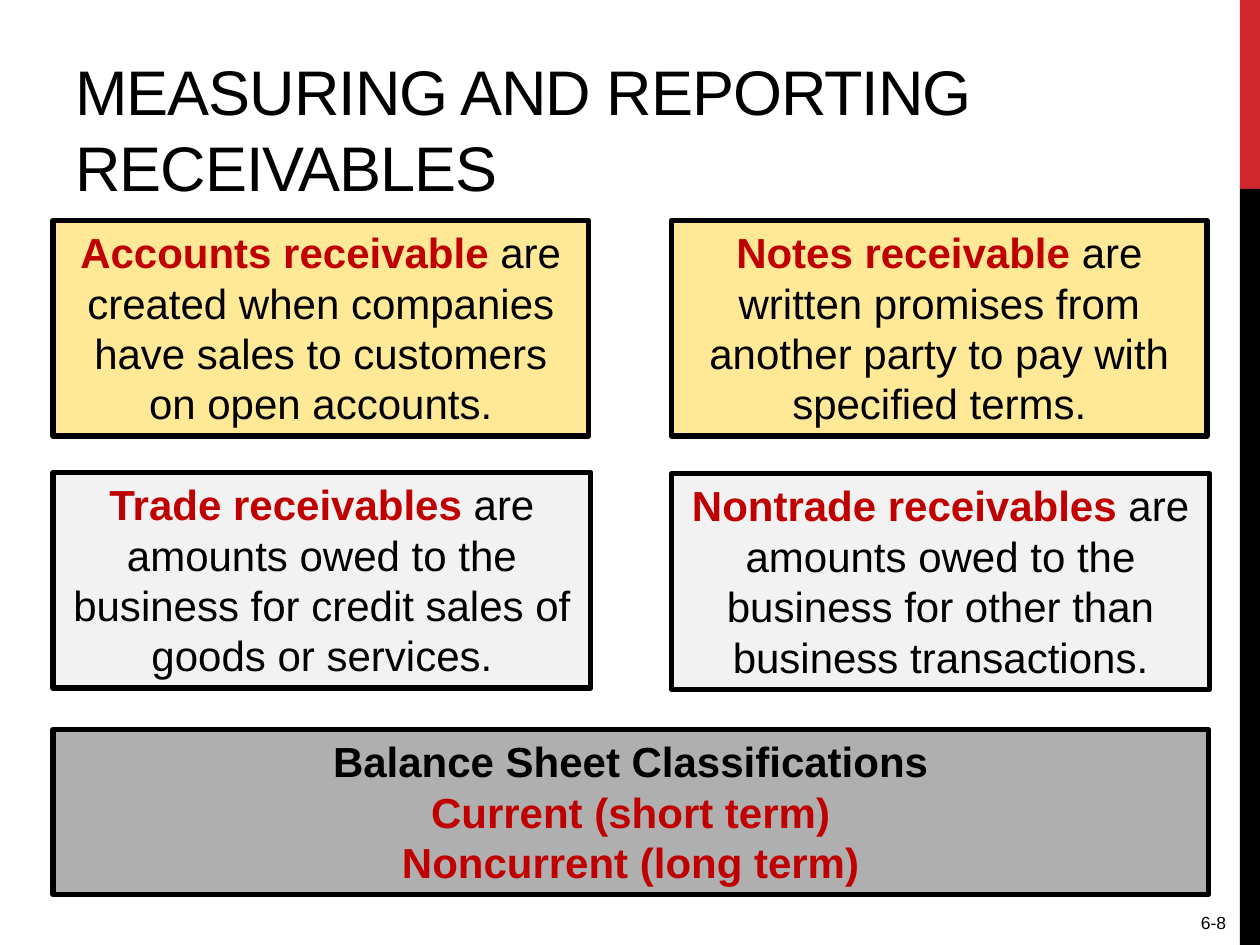
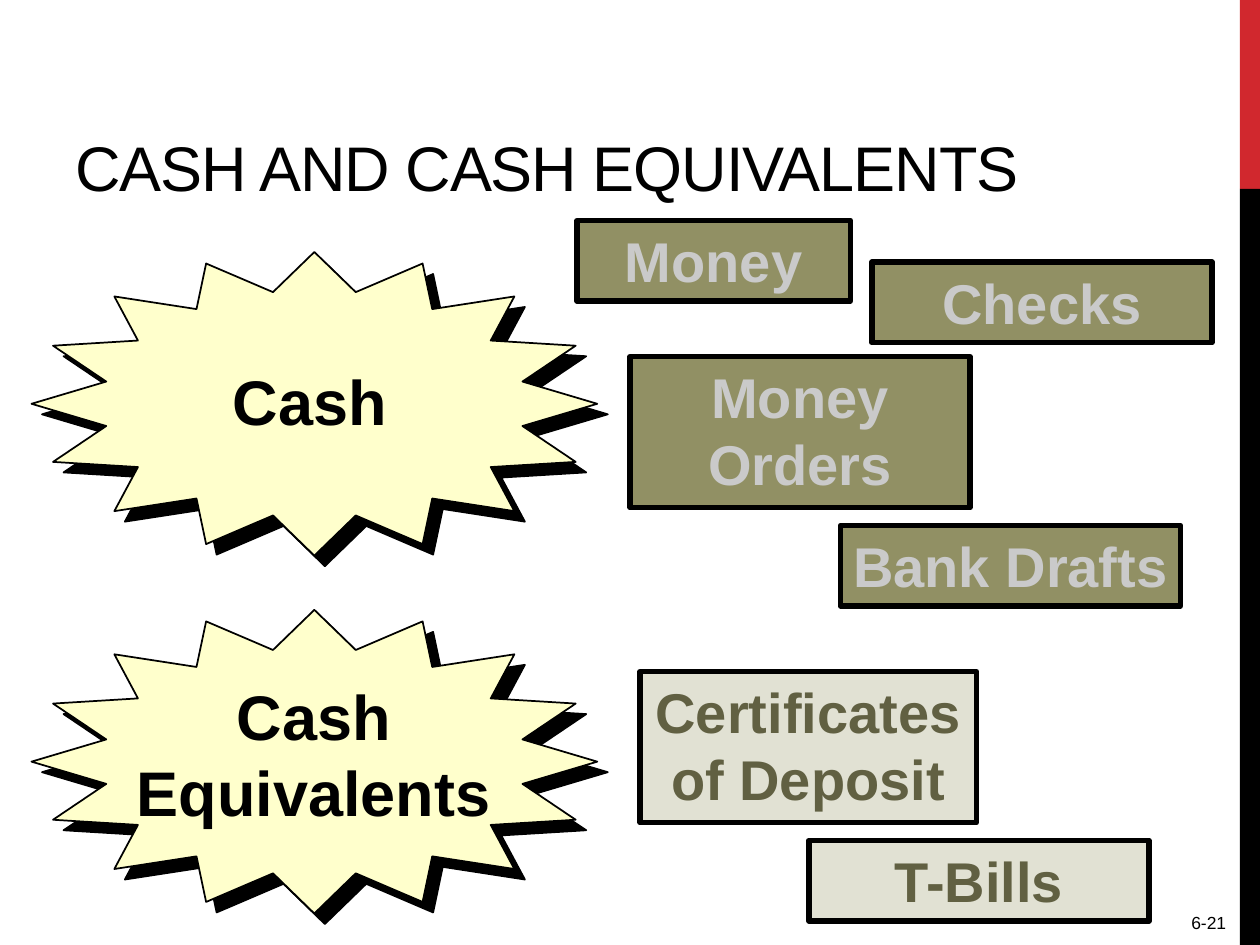
from lxml import etree
from pptx import Presentation
from pptx import util as u
from pptx.dml.color import RGBColor
from pptx.enum import shapes, text
from pptx.oxml import parse_xml
from pptx.oxml.ns import nsdecls

PX = 9144  # 100 px to the inch
FONT = "Arial"
BLACK = RGBColor(0x00, 0x00, 0x00)
BAND_RED = RGBColor(0xD1, 0x28, 0x2E)
TERM_RED = RGBColor(0xC0, 0x00, 0x00)
YELLOW = RGBColor(0xFF, 0xE9, 0x96)
PALE_GREY = RGBColor(0xF2, 0xF2, 0xF2)
MID_GREY = RGBColor(0xAF, 0xAF, 0xAF)
STAR_YELLOW = RGBColor(0xFF, 0xFF, 0xCC)
OLIVE = RGBColor(0x91, 0x90, 0x64)
SILVER = RGBColor(0xCA, 0xCA, 0xCA)
PALE_OLIVE = RGBColor(0xE1, 0xE1, 0xD3)
DARK_OLIVE = RGBColor(0x61, 0x60, 0x42)

STAR_SHADOW = (
    f'<a:effectLst {nsdecls("a")}><a:outerShdw dist="107950" dir="2700000" algn="ctr" '
    'rotWithShape="0"><a:srgbClr val="000000"/></a:outerShdw></a:effectLst>'
)


def add_shape(slide, kind, place, fill, line_width=0):
    shape = slide.shapes.add_shape(kind, *(n * PX for n in place))
    shape.shadow.inherit = False
    shape.fill.solid()
    shape.fill.fore_color.rgb = fill
    if line_width:
        shape.line.color.rgb = BLACK
        shape.line.width = u.Pt(line_width)
    else:
        shape.line.fill.background()
    return shape


def write(shape, paragraphs, size, align=text.PP_ALIGN.CENTER, anchor=text.MSO_ANCHOR.TOP):
    """Fill a shape with paragraphs, each a list of (words, colour, bold) runs."""
    frame = shape.text_frame
    frame.word_wrap = True
    frame.vertical_anchor = anchor
    for i, runs in enumerate(paragraphs):
        paragraph = frame.paragraphs[0] if i == 0 else frame.add_paragraph()
        paragraph.alignment = align
        paragraph.font.name = FONT
        paragraph.font.size = u.Pt(size)
        for words, colour, bold in runs:
            run = paragraph.add_run()
            run.text = words
            run.font.color.rgb = colour
            run.font.bold = bold
    return frame


prs = Presentation()
prs.slide_width, prs.slide_height = 1000 * PX, 750 * PX

# Title, side band and page number
slides = []
for title, page in [
    ("MEASURING AND REPORTING RECEIVABLES", "6-8"),
    ("CASH AND CASH EQUIVALENTS", "6-21"),
]:
    slide = prs.slides.add_slide(prs.slide_layouts[6])
    slides.append(slide)
    for top, height, colour in [(0, 150, BAND_RED), (150, 600, BLACK)]:
        add_shape(slide, shapes.MSO_SHAPE.RECTANGLE, (984, top, 16, height), colour)
    heading = slide.shapes.add_textbox(50 * PX, 17 * PX, 917 * PX, 150 * PX)
    frame = write(heading, [[(title, BLACK, False)]], 36,
                  text.PP_ALIGN.LEFT, text.MSO_ANCHOR.BOTTOM)
    frame.paragraphs[0].runs[0].font._element.set("spc", "-60")
    number = slide.shapes.add_textbox(800 * PX, 719 * PX, 183 * PX, 31 * PX)
    write(number, [[(page, BLACK, False)]], 10, text.PP_ALIGN.RIGHT)

receivables, cash = slides

# Slide 1: kinds of receivables
for place, fill, term, meaning in [
    ((42, 175, 425, 171), YELLOW, "Accounts receivable ",
     "are created when companies have sales to customers on open accounts."),
    ((533, 175, 425, 171), YELLOW, "Notes receivable ",
     "are written promises from another party to pay with specified terms."),
    ((42, 375, 427, 171), PALE_GREY, "Trade receivables ",
     "are amounts owed to the business for credit sales of goods or services."),
    ((533, 376, 427, 171), PALE_GREY, "Nontrade receivables ",
     "are amounts owed to the business for other than business transactions."),
]:
    definition = add_shape(receivables, shapes.MSO_SHAPE.RECTANGLE, place, fill, 3)
    write(definition, [[(term, TERM_RED, True), (meaning, BLACK, False)]], 24)

classifications = add_shape(receivables, shapes.MSO_SHAPE.RECTANGLE,
                            (42, 579, 917, 131), MID_GREY, 3)
write(classifications, [
    [("Balance Sheet Classifications", BLACK, True)],
    [("Current (short term)", TERM_RED, True)],
    [("Noncurrent (long term)", TERM_RED, True)],
], 24)

# Slide 2: starbursts with their examples
for star_top, label, label_place in [
    (200, "Cash", (83, 283, 326, 70)),
    (484, "Cash Equivalents", (86, 533, 326, 131)),
]:
    star = add_shape(cash, shapes.MSO_SHAPE.STAR_16_POINT,
                     (25, star_top, 449, 241), STAR_YELLOW, 1)
    star.adjustments[0] = 0.375
    no_effects = star._element.spPr.find("{*}effectLst")
    no_effects.getparent().replace(no_effects, parse_xml(STAR_SHADOW))
    caption = cash.shapes.add_textbox(*(n * PX for n in label_place))
    write(caption, [[(label, BLACK, True)]], 36)

for example, place, fill, colour in [
    ("Money", (458, 175, 217, 64), OLIVE, SILVER),
    ("Checks", (692, 208, 270, 64), OLIVE, SILVER),
    ("Money Orders", (500, 283, 270, 120), OLIVE, SILVER),
    ("Bank Drafts", (667, 417, 270, 64), OLIVE, SILVER),
    ("Certificates of Deposit", (508, 533, 267, 120), PALE_OLIVE, DARK_OLIVE),
    ("T-Bills", (642, 667, 270, 64), PALE_OLIVE, DARK_OLIVE),
]:
    box = add_shape(cash, shapes.MSO_SHAPE.RECTANGLE, place, fill, 3)
    write(box, [[(example, colour, True)]], 32)

prs.save("out.pptx")
